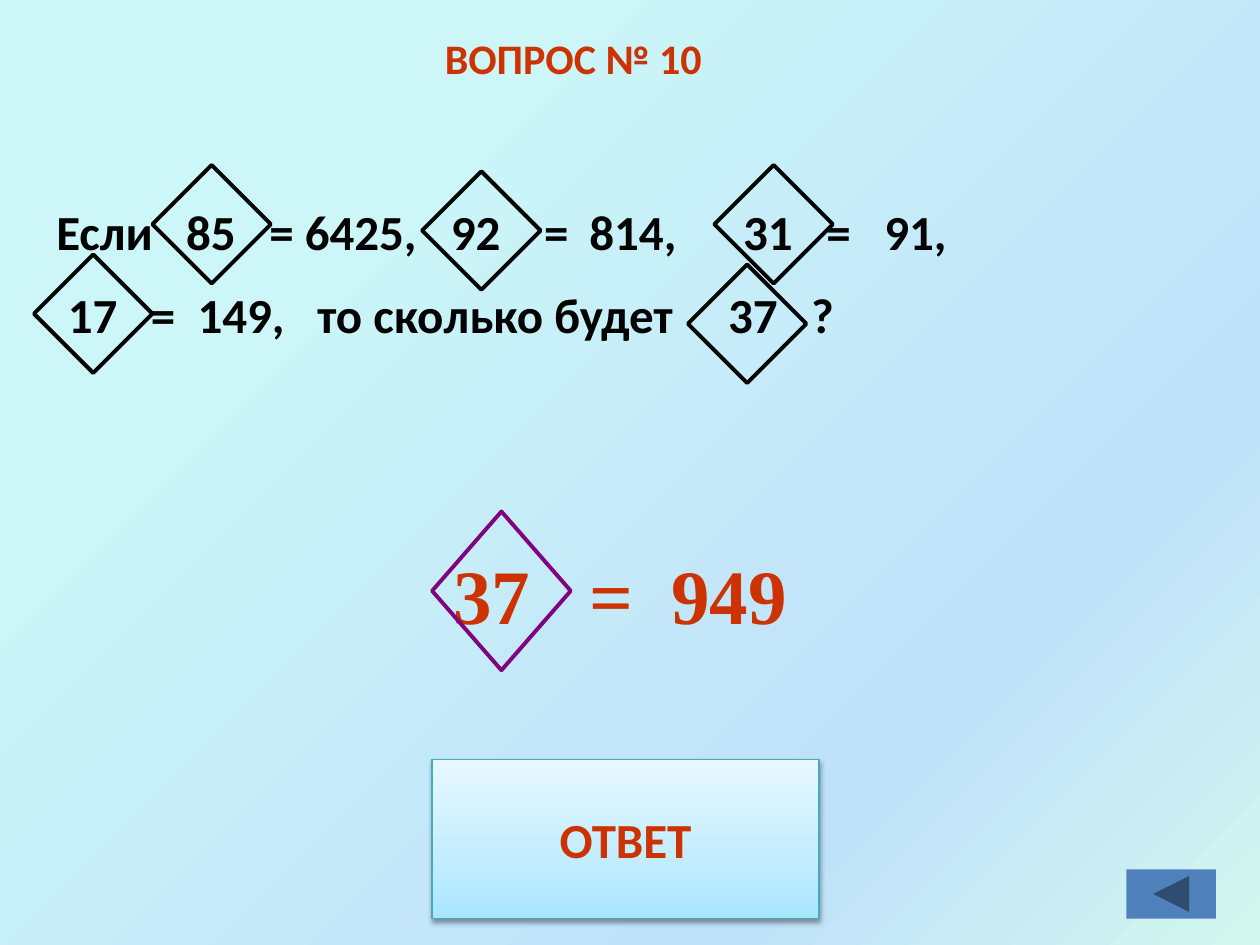
from lxml import etree
from pptx import Presentation
from pptx.dml.color import RGBColor
from pptx.enum.shapes import MSO_SHAPE
from pptx.enum.text import MSO_ANCHOR, MSO_AUTO_SIZE, PP_ALIGN
from pptx.oxml.ns import qn
from pptx.util import Inches, Pt

DIAMOND = MSO_SHAPE.DIAMOND
BLANK_BUTTON = MSO_SHAPE.ACTION_BUTTON_CUSTOM
BACK_BUTTON = MSO_SHAPE.ACTION_BUTTON_BACK_OR_PREVIOUS
LEFT, CENTER = PP_ALIGN.LEFT, PP_ALIGN.CENTER
TOP, MIDDLE = MSO_ANCHOR.TOP, MSO_ANCHOR.MIDDLE
GROW = MSO_AUTO_SIZE.SHAPE_TO_FIT_TEXT
TITLE_ONLY = 5

COLORS = {
    "accent": "CC3300",
    "ink": "000000",
    "answer_frame": "800080",
    "button_edge": "46AAC5",
    "back": "4F81BD",
}
BACKDROP_STOPS = [(25, "CCF6F8"), (75, "BFE1F9"), (100, "D2F7EF")]
BUTTON_STOPS = [(0, "A7E6FF"), (35, "C1EDFF"), (100, "E7F8FF")]


def rgb(name):
    """Return the palette colour of that name."""
    return RGBColor.from_string(COLORS[name])


def add_gradient(fill, element, stops, angle):
    """Give a fill a linear gradient with any number of stops."""
    fill.gradient()
    fill.gradient_angle = angle
    stop_list = element.xpath(".//a:gradFill/a:gsLst")[0]
    for old_stop in list(stop_list):
        stop_list.remove(old_stop)
    for position, color in stops:
        stop = etree.SubElement(stop_list, qn("a:gs"), pos=str(position * 1000))
        etree.SubElement(stop, qn("a:srgbClr"), val=color)


def add_run(paragraph, text, size, color, font="Calibri"):
    """Add one bold run."""
    run = paragraph.add_run()
    run.text = text
    run.font.name = font
    run.font.size = Pt(size)
    run.font.bold = True
    run.font.color.rgb = rgb(color)


def add_tabs(paragraph, stops):
    """Set left tab stops, in inches from the text edge."""
    tab_list = etree.SubElement(paragraph._p.get_or_add_pPr(), qn("a:tabLst"))
    for stop in stops:
        etree.SubElement(tab_list, qn("a:tab"), pos=str(Inches(stop)), algn="l")


def add_diamond(slide, left, top, width, height, color):
    """Draw a hollow diamond that frames a number."""
    diamond = slide.shapes.add_shape(
        DIAMOND, Inches(left), Inches(top), Inches(width), Inches(height))
    diamond.shadow.inherit = False
    diamond.fill.background()
    diamond.line.color.rgb = rgb(color)
    diamond.line.width = Pt(2.25)


def add_text_area(slide, left, top, width, height):
    """Add a wrapping text box and return its frame."""
    area = slide.shapes.add_textbox(
        Inches(left), Inches(top), Inches(width), Inches(height))
    area.text_frame.word_wrap = True
    area.text_frame.auto_size = GROW
    return area.text_frame


def add_heading(slide, left, top, width, height):
    """Place the question number in the title placeholder."""
    heading = slide.shapes.title
    heading.left, heading.top = Inches(left), Inches(top)
    heading.width, heading.height = Inches(width), Inches(height)
    frame = heading.text_frame
    frame.vertical_anchor = TOP
    frame.auto_size = GROW
    frame.paragraphs[0].alignment = LEFT
    add_run(frame.paragraphs[0], "ВОПРОС № 10", 24, "accent")


def add_question(slide, left, top, width, height):
    """Write the two lines of the puzzle and frame their numbers."""
    lines = [
        ("Если\t85\t= 6425,\t92\t=\t814,\t31\t=\t91,",
         [1.03, 1.69, 3.13, 3.87, 4.23, 5.45, 6.11, 6.57]),
        ("\t17\t=\t149,\tто сколько будет\t37\t?",
         [0.09, 0.75, 1.12, 2.07, 5.33, 5.99]),
    ]
    frame = add_text_area(slide, left, top, width, height)
    for index, (text, stops) in enumerate(lines):
        line = frame.add_paragraph() if index else frame.paragraphs[0]
        if index:
            line.space_before = Pt(14)
        add_tabs(line, stops)
        add_run(line, text, 28, "ink")
    offsets = [(0.86, -0.24), (3, -0.19), (5.32, -0.24), (-0.08, 0.47), (5.11, 0.55)]
    for dx, dy in offsets:
        add_diamond(slide, left + dx, top + dy, 0.94, 0.94, "ink")


def add_answer(slide, left, top, width, height):
    """Write the solved equation and frame its number."""
    equation = add_text_area(slide, left, top, width, height).paragraphs[0]
    add_tabs(equation, [3.5, 4.58, 5.23])
    add_run(equation, "\t37\t=\t949", 44, "accent", "Times New Roman")
    add_diamond(slide, left + 3.43, top - 0.24, 1.1, 1.26, "answer_frame")


def add_answer_button(slide, left, top, width, height):
    """Draw the shaded answer button with its soft shadow."""
    button = slide.shapes.add_shape(
        BLANK_BUTTON, Inches(left), Inches(top), Inches(width), Inches(height))
    add_gradient(button.fill, button._element, BUTTON_STOPS, 90)
    button.line.color.rgb = rgb("button_edge")
    button.line.width = Pt(0.75)
    button.shadow.inherit = False
    effects = button._element.spPr.find(qn("a:effectLst"))
    shadow = etree.SubElement(
        effects, qn("a:outerShdw"), blurRad=str(Pt(3.1)), dist=str(Pt(1.6)),
        dir="5400000", rotWithShape="0")
    shade = etree.SubElement(shadow, qn("a:srgbClr"), val=COLORS["ink"])
    etree.SubElement(shade, qn("a:alpha"), val="38000")
    frame = button.text_frame
    frame.word_wrap = False
    frame.vertical_anchor = MIDDLE
    frame.paragraphs[0].alignment = CENTER
    add_run(frame.paragraphs[0], "ОТВЕТ", 28, "accent")


def add_back_button(slide, left, top, width, height):
    """Draw the button that leads back."""
    back = slide.shapes.add_shape(
        BACK_BUTTON, Inches(left), Inches(top), Inches(width), Inches(height))
    back.shadow.inherit = False
    back.fill.solid()
    back.fill.fore_color.rgb = rgb("back")
    back.line.fill.background()


def main():
    """Build the quiz slide."""
    deck = Presentation()
    deck.slide_width, deck.slide_height = Inches(10), Inches(7.5)
    slide = deck.slides.add_slide(deck.slide_layouts[TITLE_ONLY])
    add_gradient(slide.background.fill, slide._element, BACKDROP_STOPS, 315)
    add_heading(slide, 3.43, 0.21, 2.61, 0.5)
    add_answer_button(slide, 3.43, 6.03, 3.07, 1.26)
    add_answer(slide, 0, 4.3, 10, 0.83)
    add_back_button(slide, 8.94, 6.9, 0.71, 0.39)
    add_question(slide, 0.35, 1.55, 9.37, 1.27)
    deck.save("out.pptx")


if __name__ == "__main__":
    main()
